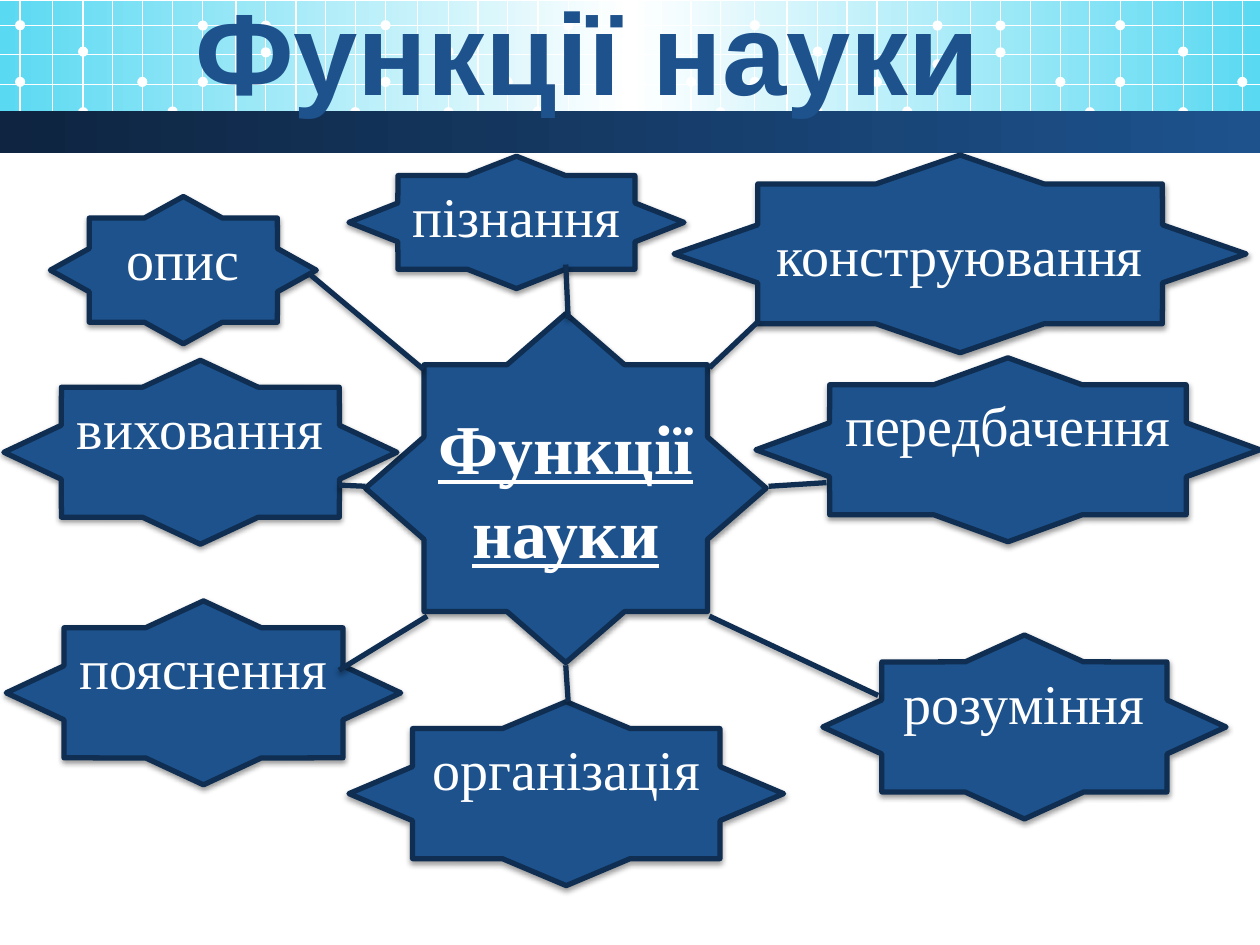
from copy import deepcopy

from lxml.etree import SubElement
from pptx import Presentation
from pptx.dml.color import RGBColor
from pptx.enum.shapes import MSO_CONNECTOR, MSO_SHAPE
from pptx.enum.text import MSO_ANCHOR, PP_ALIGN
from pptx.oxml.ns import qn
from pptx.util import Pt

WHITE = RGBColor(0xFF, 0xFF, 0xFF)
CYAN = RGBColor(0x5A, 0xD9, 0xF2)
NAVY = RGBColor(0x0E, 0x24, 0x40)
BLUE = RGBColor(0x1D, 0x52, 0x8D)
OUTLINE = RGBColor(0x0F, 0x2E, 0x51)

TITLE = "Функції науки"
TITLE_FONT = {"name": "Arial", "size": Pt(66), "bold": True}
CENTER_FONT = {"name": "Times New Roman", "size": Pt(40), "bold": True, "underline": True}
LABEL_FONT = {"name": "Times New Roman", "size": Pt(32)}

STARS = [
    (TITLE, (208.8, 179.3, 229, 199.4), CENTER_FONT, MSO_ANCHOR.MIDDLE),
    ("опис", (28.8, 112.3, 152, 84.2), LABEL_FONT, MSO_ANCHOR.TOP),
    ("пояснення", (3.6, 343.4, 225.4, 105.1), LABEL_FONT, MSO_ANCHOR.TOP),
    ("передбачення", (432, 204.5, 288, 105.1), LABEL_FONT, MSO_ANCHOR.TOP),
    ("розуміння", (470.2, 362.9, 230.4, 105.1), LABEL_FONT, MSO_ANCHOR.TOP),
    ("пізнання", (199.4, 89.3, 191.5, 75.6), LABEL_FONT, MSO_ANCHOR.TOP),
    ("виховання", (2.2, 205.9, 224.6, 105.1), LABEL_FONT, MSO_ANCHOR.TOP),
    ("організація", (199.4, 401, 248.4, 105.1), LABEL_FONT, MSO_ANCHOR.TOP),
    ("конструювання", (385.2, 88.6, 326.9, 113), LABEL_FONT, MSO_ANCHOR.MIDDLE),
]
SPOKES = [
    (208.8, 277.9, 193.7, 277.2),
    (244.1, 352.1, 193.7, 383),
    (241.9, 211, 176.4, 156.2),
    (324.7, 182.2, 323.3, 151.2),
    (324.7, 401, 323.3, 380.2),
    (405.4, 210.2, 433.4, 183.6),
    (472.3, 275.8, 439.2, 277.9),
    (405.4, 352.1, 501.8, 397.4),
]

TILE_STARTS = [11.5, 220.3, 431.3, 640.1]
COLUMN_OFFSETS = [0, 18.4, 36, 52.8, 69.8, 87.1, 104.4, 123.4, 140.4, 157.7, 174.6, 191.5]
ROWS = [14.4, 31, 48.2, 64.1]
TILE_DOTS = [(0, 46.8), (0, 14.4), (2, 29.5), (2, 64.1), (4, 46.8), (5, 63.7),
             (6, 14.6), (8, 29.9), (8, 14.6), (10, 46.8), (11, 64.1)]
VARYING_DOTS = [46.8, 31, 36.7]
DOT = 5.8
GRID_BOTTOM = 79.2
SLIDE_WIDTH, SLIDE_HEIGHT = 720, 540

deck = Presentation()
deck.slide_width, deck.slide_height = Pt(SLIDE_WIDTH), Pt(SLIDE_HEIGHT)
page = deck.slides.add_slide(deck.slide_layouts[6])


def add_shadow(shape, opacity, distance):
    properties = shape._element.spPr
    effects = properties.find(qn("a:effectLst"))
    if effects is None:
        effects = SubElement(properties, qn("a:effectLst"))
    if opacity:
        shadow = SubElement(effects, qn("a:outerShdw"), blurRad=str(Pt(3.1)),
                            dist=str(Pt(distance)), dir="5400000", rotWithShape="0")
        color = SubElement(shadow, qn("a:srgbClr"), val="000000")
        SubElement(color, qn("a:alpha"), val=str(opacity * 1000))


def add_block(kind, bounds, fill=None):
    block = page.shapes.add_shape(kind, *map(Pt, bounds))
    block.shadow.inherit = False
    block.line.fill.background()
    if fill is not None:
        block.fill.solid()
        block.fill.fore_color.rgb = fill
    return block


def add_band(bounds, colors):
    fill = add_block(MSO_SHAPE.RECTANGLE, bounds).fill
    fill.gradient()
    fill.gradient_angle = 0
    stops = fill._fill._gradFill.find(qn("a:gsLst"))
    for extra in range(len(colors) - len(stops)):
        stops.append(deepcopy(stops[0]))
    for index, (stop, color) in enumerate(zip(fill.gradient_stops, colors)):
        stop.position = index / (len(colors) - 1)
        stop.color.rgb = color


def add_line(ends, color, width, opacity=0, distance=0):
    line = page.shapes.add_connector(MSO_CONNECTOR.STRAIGHT, *map(Pt, ends))
    line.line.color.rgb = color
    line.line.width = Pt(width)
    add_shadow(line, opacity, distance)


def write(shape, text, style, color, anchor):
    frame = shape.text_frame
    frame.word_wrap = True
    frame.vertical_anchor = anchor
    para = frame.paragraphs[0]
    para.alignment = PP_ALIGN.CENTER
    span = para.add_run()
    span.text = text
    for name, value in style.items():
        setattr(span.font, name, value)
    span.font.color.rgb = color
    return para


add_band((0, 0.7, SLIDE_WIDTH, 73.4), [CYAN, WHITE, CYAN])
for tile, start in enumerate(TILE_STARTS):
    for offset in COLUMN_OFFSETS:
        if start + offset < SLIDE_WIDTH:
            add_line((start + offset, 0, start + offset, GRID_BOTTOM), WHITE, 0.75)
    dots = TILE_DOTS + [(6, height) for height in VARYING_DOTS[tile:tile + 1]]
    for column, height in dots:
        center = start + COLUMN_OFFSETS[column]
        if center < SLIDE_WIDTH:
            add_block(MSO_SHAPE.OVAL, (center - DOT / 2, height - DOT / 2, DOT, DOT), WHITE)
for row in ROWS:
    add_line((0, row, SLIDE_WIDTH, row), WHITE, 0.75)
add_band((0, 63.4, SLIDE_WIDTH, 23.8), [NAVY, BLUE])

title_box = page.shapes.add_textbox(*map(Pt, (-2.9, -0.7, 677.5, 71.3)))
write(title_box, TITLE, TITLE_FONT, BLUE, MSO_ANCHOR.BOTTOM).line_spacing = 0.8

for text, bounds, style, anchor in STARS:
    star = add_block(MSO_SHAPE.STAR_8_POINT, bounds, BLUE)
    star.adjustments[0] = 0.383
    star.line.color.rgb = OUTLINE
    star.line.width = Pt(3)
    add_shadow(star, 38, 1.6)
    write(star, text, style, WHITE, anchor)
for ends in SPOKES:
    add_line(ends, OUTLINE, 3, 35, 1.8)

deck.save("out.pptx")
